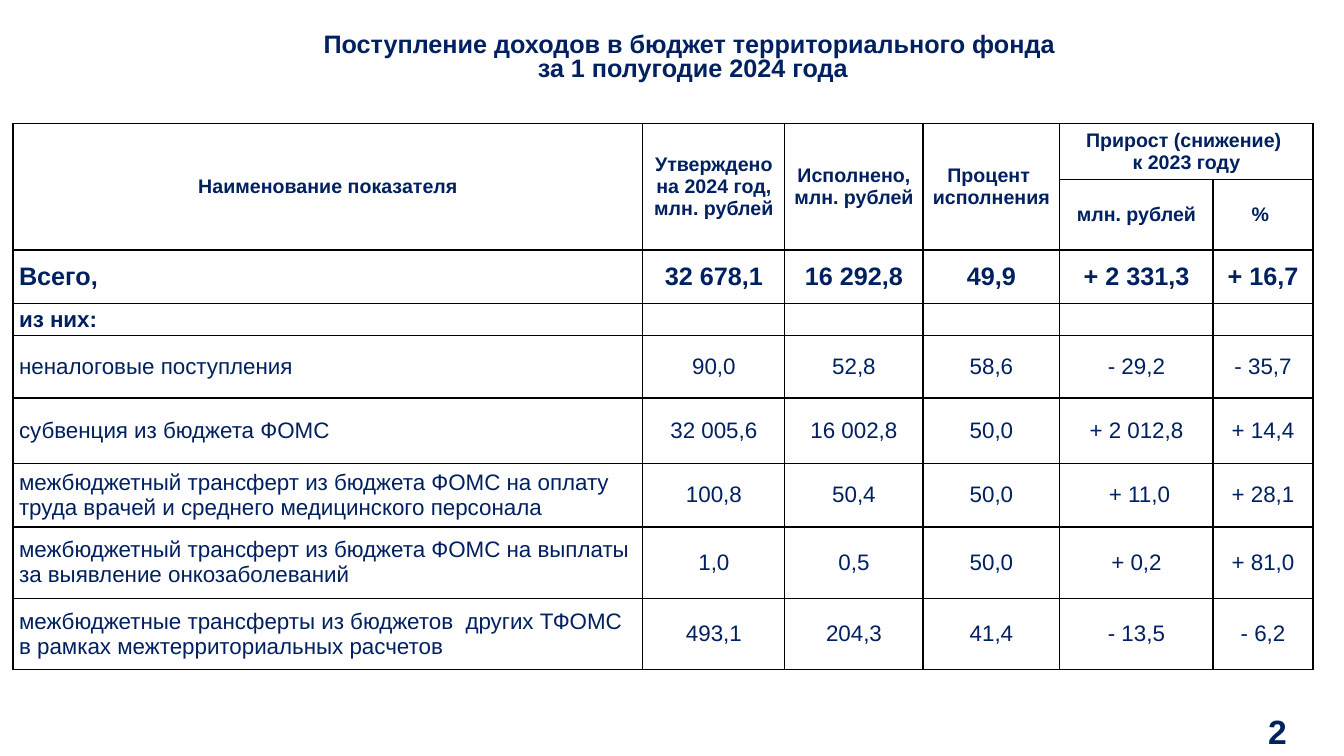
from pptx import Presentation
from pptx import util as u
from pptx.dml import color
from pptx.enum import text
from pptx.oxml import ns
from lxml import etree

NAVY = "002060"
LEFT, CENTER = text.PP_ALIGN.LEFT, text.PP_ALIGN.CENTER
COLUMNS = [15.87, 3.58, 3.48, 3.45, 3.86, 2.52]
HEIGHTS = [1.4, 1.65, 1.35, 0.81, 1.57, 1.65, 1.6, 1.8, 1.8]
ROWS = [
    ["Наименование показателя", "Утверждено\nна 2024 год,\nмлн. рублей",
     "Исполнено, млн. рублей", "Процент \nисполнения",
     "Прирост (снижение) \nк 2023 году", ""],
    ["", "", "", "", "млн. рублей", "% "],
    ["Всего,", "32 678,1", "16 292,8", "49,9", "+ 2 331,3", "+ 16,7"],
    ["из них:", "", "", "", "", ""],
    ["неналоговые поступления", "90,0", "52,8", "58,6", "- 29,2", "- 35,7"],
    ["субвенция из бюджета ФОМС", "32 005,6", "16 002,8", "50,0", "+ 2 012,8", "+ 14,4"],
    ["межбюджетный трансферт из бюджета ФОМС на оплату труда врачей "
     "и среднего медицинского персонала", "100,8", "50,4", "50,0", " + 11,0", "+ 28,1"],
    ["межбюджетный трансферт из бюджета ФОМС на выплаты \nза выявление онкозаболеваний",
     "1,0", "0,5", "50,0", "+ 0,2", "+ 81,0"],
    ["межбюджетные трансферты из бюджетов  других ТФОМС "
     "в рамках межтерриториальных расчетов", "493,1", "204,3", "41,4", "- 13,5", "- 6,2"],
]
HEADER = {"size": u.Pt(14), "bold": True}
TOTAL = {"size": u.Pt(18), "bold": True}
SUBHEAD = {"size": u.Pt(16), "bold": True}
BODY = {"size": u.Pt(16), "bold": False}
FORMATS = [HEADER, HEADER, TOTAL, SUBHEAD] + [BODY] * 5
CELL = {"margin_left": u.Cm(0.15), "margin_right": u.Cm(0.15), "margin_top": 0,
        "margin_bottom": 0, "vertical_anchor": text.MSO_ANCHOR.MIDDLE}


def rgb(value):
    return color.RGBColor.from_string(value)


def apply(target, values):
    for name, value in values.items():
        setattr(target, name, value)


def write(tf, content, font, align=CENTER, spacing=None):
    tf.text = content
    for p in tf.paragraphs:
        apply(p, {"alignment": align, "line_spacing": spacing})
        for r in p.runs:
            apply(r.font, {"name": "Arial", **font})
            r.font.color.rgb = rgb(NAVY)


def add_text(s, box, content, font, spacing=None):
    tf = s.shapes.add_textbox(*map(u.Cm, box)).text_frame
    tf.word_wrap = True
    write(tf, content, font, spacing=spacing)


def add_borders(cell):
    props = cell._tc.get_or_add_tcPr()
    for side in ("a:lnL", "a:lnR", "a:lnT", "a:lnB"):
        line = etree.SubElement(props, ns.qn(side), w=str(u.Pt(1)))
        fill = etree.SubElement(line, ns.qn("a:solidFill"))
        etree.SubElement(fill, ns.qn("a:srgbClr"), val="000000")


def add_income_table(s):
    frame = s.shapes.add_table(len(ROWS), len(COLUMNS), u.Cm(0.33), u.Cm(3.12),
                               u.Cm(sum(COLUMNS)), u.Cm(sum(HEIGHTS)))
    table = frame.table
    apply(table, {"first_row": False, "horz_banding": False})
    for column, width in zip(table.columns, COLUMNS):
        column.width = u.Cm(width)
    for i, (values, height, font) in enumerate(zip(ROWS, HEIGHTS, FORMATS)):
        table.rows[i].height = u.Cm(height)
        for j, value in enumerate(values):
            cell = table.cell(i, j)
            apply(cell, CELL)
            add_borders(cell)
            cell.fill.background()
            align = LEFT if j == 0 and font is not HEADER else CENTER
            write(cell.text_frame, value, font, align)
    for j in range(4):
        table.cell(0, j).merge(table.cell(1, j))
    table.cell(0, 4).merge(table.cell(0, 5))


def main():
    prs = Presentation()
    apply(prs, {"slide_width": u.Cm(33.87), "slide_height": u.Cm(19.05)})
    s = prs.slides.add_slide(prs.slide_layouts[6])
    add_text(s, (2.13, 0.74, 30.66, 1.4),
             "Поступление доходов в бюджет территориального фонда \vза 1 полугодие 2024 года",
             TOTAL, 0.8)
    add_income_table(s)
    add_text(s, (30.53, 17.78, 3.33, 1.27), "2", {"size": u.Pt(24), "bold": True})
    prs.save("out.pptx")


if __name__ == "__main__":
    main()
